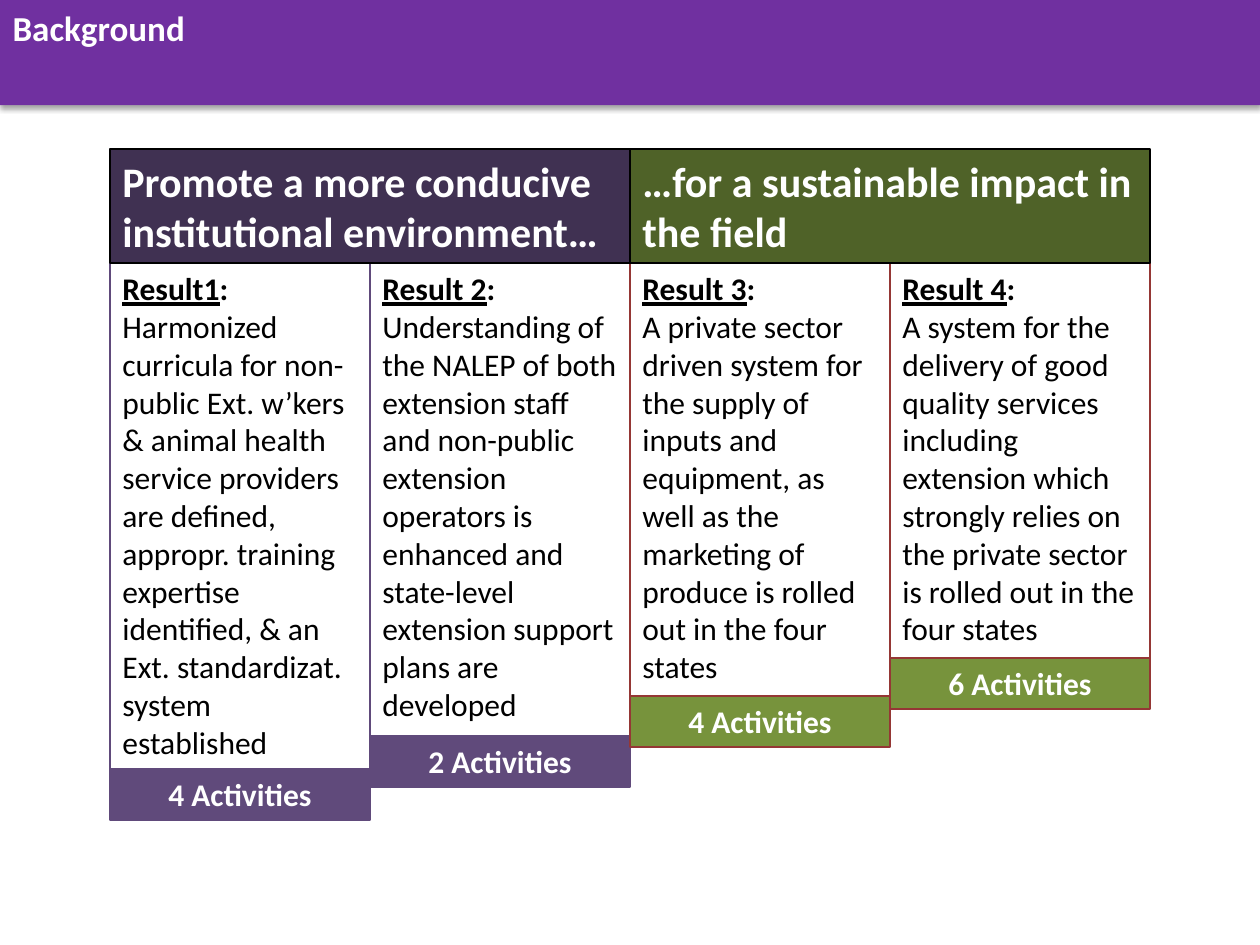
from lxml.etree import SubElement
from pptx import Presentation
from pptx.dml.color import RGBColor
from pptx.enum.shapes import MSO_SHAPE as SHAPE
from pptx.enum.text import MSO_ANCHOR as ANCHOR, MSO_AUTO_SIZE as FIT, PP_ALIGN as ALIGN
from pptx.oxml.ns import qn
from pptx.util import Emu, Pt

TITLE = "Background"
THEMES = [
    dict(text="Promote a more conducive institutional environment…",
         head="403152", tag="604A7B", line="604A7B"),
    dict(text="…for a sustainable impact in the field",
         head="4F6228", tag="77933C", line="953735"),
]
RESULTS = [
    ("Result1", ": ", "Harmonized curricula for non-public Ext. w’kers & animal health service "
     "providers are defined, appropr. training expertise identified, & an Ext. standardizat. "
     "system established", "4 Activities", 769),
    ("Result 2", ": ", "Understanding of the NALEP of both extension staff and non-public "
     "extension operators is enhanced and state-level extension support plans are developed",
     "2 Activities", 736),
    ("Result 3", ":\v", "A private sector driven system for the supply of inputs and equipment, "
     "as well as the marketing of produce is rolled out in the four states",
     "4 Activities", 696),
    ("Result 4", ":\v", "A system for the delivery of good quality services including extension "
     "which strongly relies on the private sector is rolled out in the four states",
     "6 Activities", 658),
]
LEFT, TOP, COL_W, HEAD_H, TAG_H = 110, 149, 260, 114, 51
SLIDE_W, SLIDE_H, BAR_H = 1260, 945, 55


def px(n):
    return Emu(round(n * 914400 / 126))


def rgb(value):
    return RGBColor.from_string(value)


def paint(sp, fill=None, line=None, width=0.75):
    if fill:
        sp.fill.solid()
        sp.fill.fore_color.rgb = rgb(fill)
    else:
        sp.fill.background()
    if line:
        sp.line.color.rgb = rgb(line)
        sp.line.width = Pt(width)
    else:
        sp.line.fill.background()


def write(sp, runs, size, color, align=ALIGN.LEFT, anchor=ANCHOR.TOP):
    tf = sp.text_frame
    tf.word_wrap = True
    tf.auto_size = FIT.SHAPE_TO_FIT_TEXT
    tf.vertical_anchor = anchor
    p = tf.paragraphs[0]
    p.alignment = align
    for text, bold, underline in runs:
        r = p.add_run()
        r.text = text
        f = r.font
        f.name, f.size, f.bold, f.underline = "Calibri", Pt(size), bold, underline
        f.color.rgb = rgb(color)
        if text.endswith("\v"):
            r.text = text[:-1]
            p.add_line_break()


def add_box(s, x, y, w, h):
    sp = s.shapes.add_shape(SHAPE.RECTANGLE, px(x), px(y), px(w), px(h))
    sp.shadow.inherit = False
    return sp


def add_shadow(sp):
    effects = SubElement(sp._element.spPr, qn("a:effectLst"))
    shadow = SubElement(effects, qn("a:outerShdw"), blurRad=str(Pt(3.1)), dist=str(Pt(1.8)),
                        dir="5400000", rotWithShape="0")
    color = SubElement(shadow, qn("a:srgbClr"), val="000000")
    SubElement(color, qn("a:alpha"), val="35000")


prs = Presentation()
prs.slide_width, prs.slide_height = px(SLIDE_W), px(SLIDE_H)
s = prs.slides.add_slide(prs.slide_layouts[5])

title = s.shapes.title
title.left, title.top, title.width, title.height = px(0), px(0), px(SLIDE_W), px(BAR_H)
paint(title, "7030A0")
add_shadow(title)
write(title, [(TITLE, True, False)], 20, "FFFFFF")

body_top = TOP + HEAD_H
for i, (name, colon, text, activities, tag_top) in enumerate(RESULTS):
    theme = THEMES[i // 2]
    x = LEFT + i * COL_W
    body = add_box(s, x, body_top, COL_W, tag_top - body_top)
    paint(body, line=theme["line"])
    write(body, [(name, True, True), (colon, True, False), (text, False, False)], 18, "000000")
    tag = add_box(s, x, tag_top, COL_W, TAG_H)
    paint(tag, theme["tag"], theme["line"])
    write(tag, [(activities, True, False)], 18, "FFFFFF", ALIGN.CENTER)

for i, theme in enumerate(THEMES):
    head = add_box(s, LEFT + i * 2 * COL_W, TOP, 2 * COL_W, HEAD_H)
    paint(head, theme["head"], "000000", 1)
    write(head, [(theme["text"], True, False)], 24, "FFFFFF")

prs.save("out.pptx")
